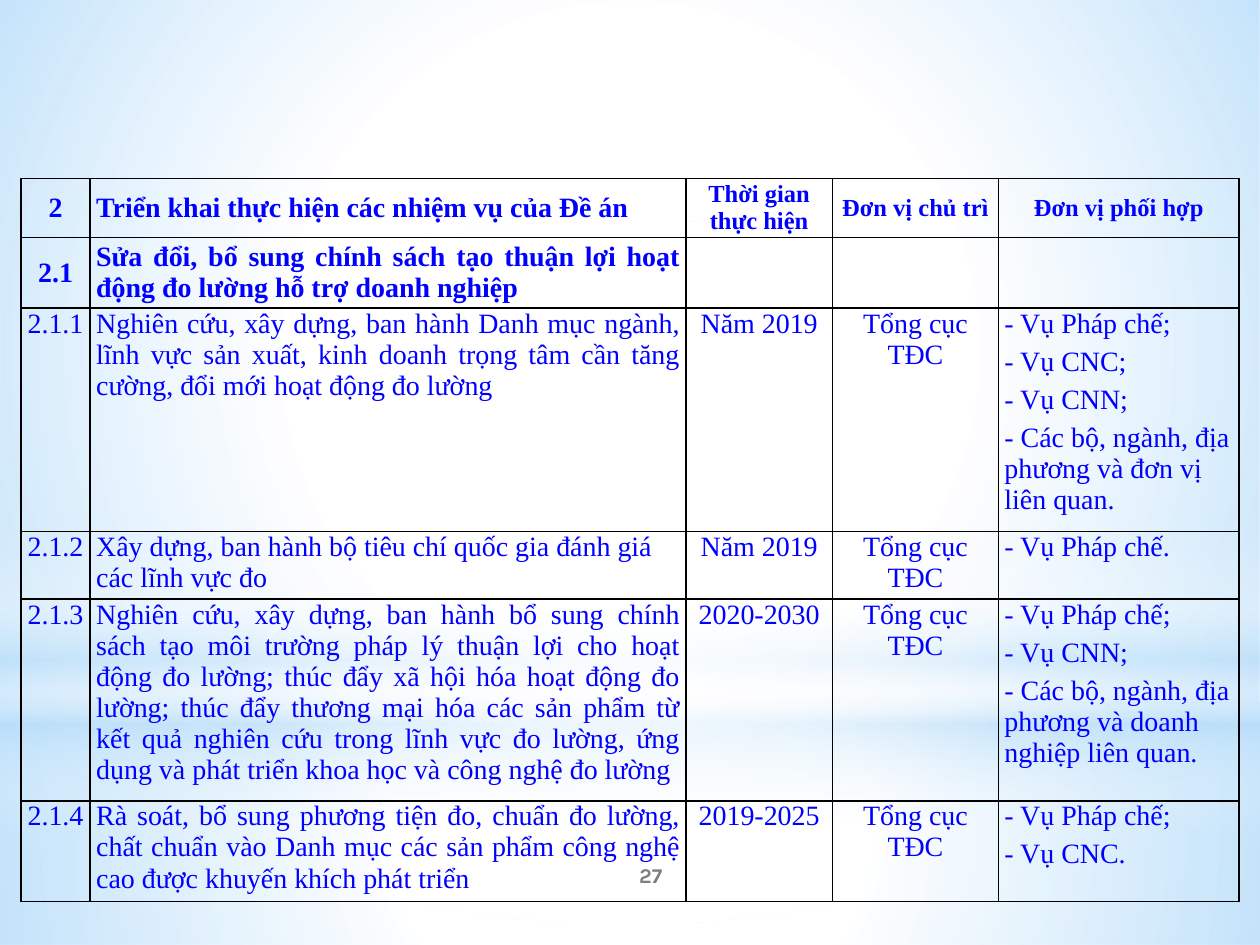
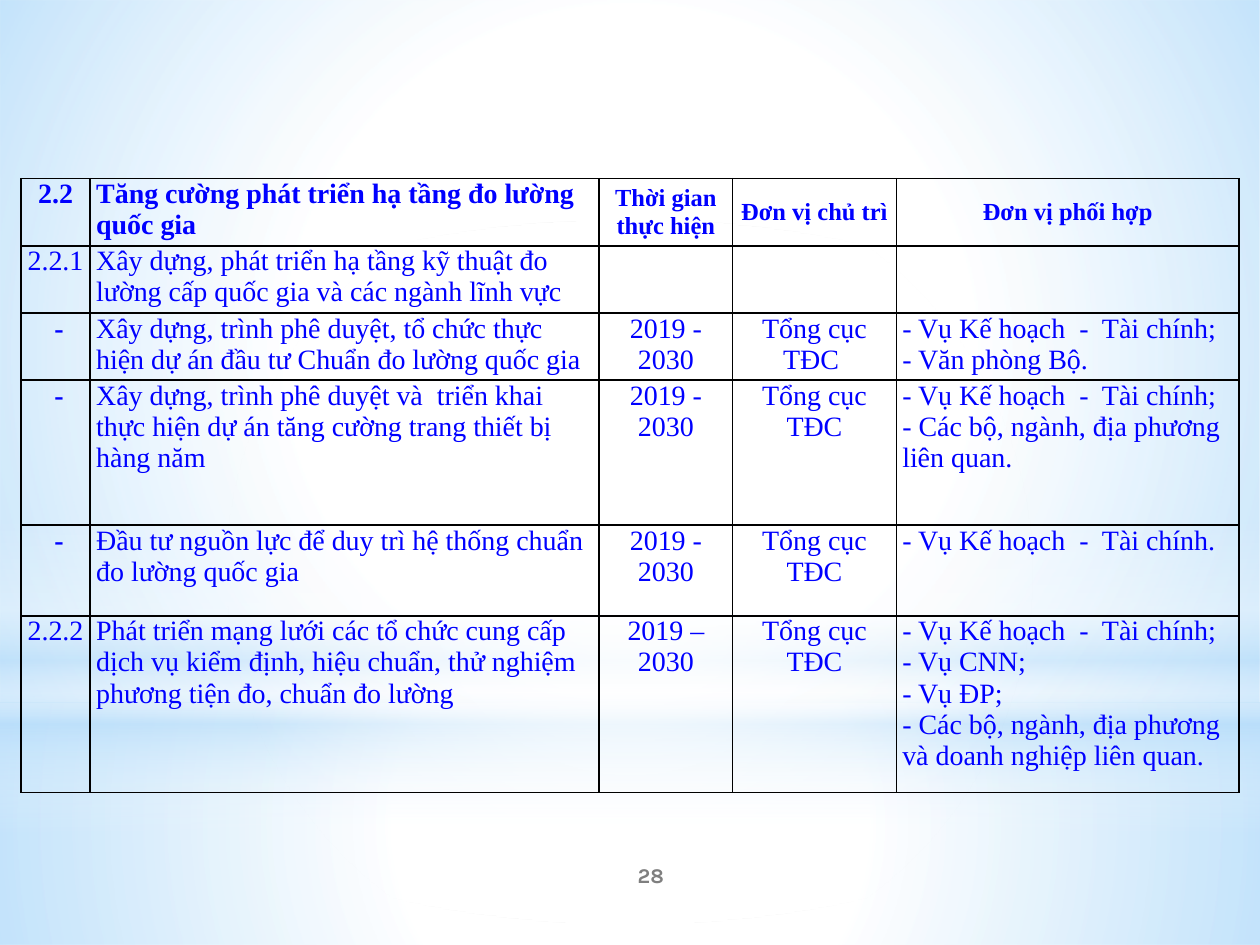
from dataclasses import dataclass

from lxml.etree import SubElement
from pptx import Presentation
from pptx.dml.color import RGBColor
from pptx.enum.shapes import MSO_SHAPE
from pptx.enum.text import MSO_ANCHOR, PP_ALIGN
from pptx.oxml import parse_xml
from pptx.oxml.ns import nsdecls, qn
from pptx.slide import Slide
from pptx.table import _Cell
from pptx.util import Cm, Pt

WHITE = RGBColor(0xFF, 0xFF, 0xFF)
SKY = RGBColor(0xB4, 0xDC, 0xFA)
BLUE = RGBColor(0x00, 0x00, 0xFF)
GRAY = RGBColor(0x7F, 0x7F, 0x7F)
BLACK = RGBColor(0x00, 0x00, 0x00)
BODY_FONT = "Times New Roman"
NUMBER_FONT = "Karla"
PERIOD_HEAD = ("Thời gian thực hiện", "Đơn vị chủ trì", "Đơn vị phối hợp")
AGENCY = "Tổng cục TĐC"
LEGAL = "- Vụ Pháp chế"
PLANNING = "- Vụ Kế hoạch  -  Tài chính"
PARTNERS = "- Các bộ, ngành, địa phương và doanh nghiệp liên quan."

RADIAL = ('<a:path path="circle"><a:fillToRect l="50000" t="50000" '
          'r="50000" b="50000"/></a:path>')
VERTICAL = '<a:lin ang="5400000" scaled="0"/>'


@dataclass(frozen=True)
class Stop:
    position: int
    color: RGBColor
    opacity: int


@dataclass(frozen=True)
class Glow:
    kind: MSO_SHAPE
    top: float
    height: float
    direction: str
    stops: tuple[Stop, ...]


@dataclass(frozen=True)
class Row:
    height: float
    cells: tuple[str, ...]
    bold: bool = False
    middle: bool = False
    justify: bool = False


@dataclass(frozen=True)
class Plan:
    number: int
    widths: tuple[float, ...]
    gap: int
    rows: tuple[Row, ...]


GLOWS = (
    Glow(MSO_SHAPE.RECTANGLE, 14.17, 4.88, RADIAL,
         (Stop(0, WHITE, 91), Stop(37, WHITE, 76), Stop(100, SKY, 79))),
    Glow(MSO_SHAPE.RECTANGLE, 0, 14.17, RADIAL,
         (Stop(0, WHITE, 89), Stop(48, WHITE, 62), Stop(100, SKY, 79))),
    Glow(MSO_SHAPE.RECTANGLE, 10.46, 6.35, VERTICAL,
         (Stop(0, WHITE, 0), Stop(29, WHITE, 30), Stop(45, SKY, 40),
          Stop(55, WHITE, 26), Stop(65, SKY, 60), Stop(100, WHITE, 0))),
    Glow(MSO_SHAPE.OVAL, 4.45, 14.17, RADIAL,
         (Stop(0, WHITE, 100), Stop(56, WHITE, 0))),
)

PLANS = (
    Plan(27, (1.4, 12.01, 2.95, 3.35, 4.85), 4, (
        Row(1.19, ("2", "Triển khai thực hiện các nhiệm vụ của Đề án", *PERIOD_HEAD),
            bold=True, middle=True, justify=True),
        Row(1.42, ("2.1", "Sửa đổi, bổ sung chính sách tạo thuận lợi hoạt động đo lường "
                   "hỗ trợ doanh nghiệp", "", "", ""),
            bold=True, middle=True, justify=True),
        Row(4.5, ("2.1.1", "Nghiên cứu, xây dựng, ban hành Danh mục ngành, lĩnh vực sản xuất, "
                  "kinh doanh trọng tâm cần tăng cường, đổi mới hoạt động đo lường",
                  "Năm 2019", AGENCY,
                  f"{LEGAL};\n- Vụ CNC;\n- Vụ CNN;\n"
                  "- Các bộ, ngành, địa phương và đơn vị liên quan."), justify=True),
        Row(1.37, ("2.1.2", "Xây dựng, ban hành bộ tiêu chí quốc gia đánh giá các lĩnh vực đo",
                   "Năm 2019", AGENCY, f"{LEGAL}.")),
        Row(4.06, ("2.1.3", "Nghiên cứu, xây dựng, ban hành bổ sung chính sách tạo môi trường "
                   "pháp lý thuận lợi cho hoạt động đo lường; thúc đẩy xã hội hóa hoạt động "
                   "đo lường; thúc đẩy thương mại hóa các sản phẩm từ kết quả nghiên cứu trong "
                   "lĩnh vực đo lường, ứng dụng và phát triển khoa học và công nghệ đo lường",
                   "2020-2030", AGENCY, f"{LEGAL};\n- Vụ CNN;\n{PARTNERS}"), justify=True),
        Row(2.03, ("2.1.4", "Rà soát, bổ sung phương tiện đo, chuẩn đo lường, chất chuẩn vào "
                   "Danh mục các sản phẩm công nghệ cao được khuyến khích phát triển",
                   "2019-2025", AGENCY, f"{LEGAL};\n- Vụ CNC."), justify=True),
    )),
    Plan(28, (1.4, 10.26, 2.69, 3.3, 6.91), 0, (
        Row(1.35, ("2.2", "Tăng cường phát triển hạ tầng đo lường quốc gia", *PERIOD_HEAD),
            bold=True),
        Row(1.35, ("2.2.1", "Xây dựng, phát triển hạ tầng kỹ thuật đo lường cấp quốc gia "
                   "và các ngành lĩnh vực", "", "", "")),
        Row(1.35, (" -", "Xây dựng, trình phê duyệt, tổ chức thực hiện dự án đầu tư "
                   "Chuẩn đo lường quốc gia", "2019 - 2030", "Tổng cục TĐC ",
                   f"{PLANNING};\n- Văn phòng Bộ.")),
        Row(2.92, (" -", "Xây dựng, trình phê duyệt và  triển khai thực hiện dự án "
                   "tăng cường trang thiết bị hàng năm", "2019 - 2030", AGENCY,
                   f"{PLANNING};\n- Các bộ, ngành, địa phương liên quan.")),
        Row(1.83, (" -", "Đầu tư nguồn lực để duy trì hệ thống chuẩn đo lường quốc gia",
                   "2019 - 2030", AGENCY, f"{PLANNING}.")),
        Row(3.56, ("2.2.2", "Phát triển mạng lưới các tổ chức cung cấp dịch vụ kiểm định, "
                   "hiệu chuẩn, thử nghiệm phương tiện đo, chuẩn đo lường",
                   "2019 – 2030", AGENCY,
                   f"{PLANNING};\n- Vụ CNN;\n- Vụ ĐP;\n{PARTNERS}")),
    )),
)


def draw_glow(s: Slide, glow: Glow) -> None:
    sp = s.shapes.add_shape(glow.kind, 0, Cm(glow.top), Cm(25.4), Cm(glow.height))
    sp.shadow.inherit = False
    sp.line.fill.background()
    sp.fill.background()
    stops = "".join(
        f'<a:gs pos="{stop.position * 1000}"><a:srgbClr val="{stop.color}">'
        f'<a:alpha val="{stop.opacity * 1000}"/></a:srgbClr></a:gs>'
        for stop in glow.stops)
    gradient = parse_xml(f'<a:gradFill {nsdecls("a")} rotWithShape="1">'
                         f'<a:gsLst>{stops}</a:gsLst>{glow.direction}</a:gradFill>')
    properties = sp._element.spPr
    properties.replace(properties.find(qn("a:noFill")), gradient)


def draw_number(s: Slide, number: int) -> None:
    tf = s.shapes.add_textbox(Cm(10.58), Cm(17.14), Cm(5.08), Cm(1.02)).text_frame
    tf.word_wrap = True
    tf.vertical_anchor = MSO_ANCHOR.MIDDLE
    p = tf.paragraphs[0]
    p.text = str(number)
    p.alignment = PP_ALIGN.CENTER
    p.font.name, p.font.size, p.font.bold = NUMBER_FONT, Pt(12), True
    p.font.color.rgb = GRAY


def format_cell(cell: _Cell) -> None:
    properties = cell._tc.get_or_add_tcPr()
    for side in ("lnL", "lnR", "lnT", "lnB"):
        line = SubElement(properties, qn(f"a:{side}"), w=str(Pt(1)))
        fill = SubElement(line, qn("a:solidFill"))
        SubElement(fill, qn("a:srgbClr"), val=str(BLACK))
    cell.fill.background()
    cell.margin_left = cell.margin_right = Cm(0.12)
    cell.margin_top = cell.margin_bottom = 0


def fill_cell(cell: _Cell, text: str, row: Row, column: int, gap: int) -> None:
    is_head = text in PERIOD_HEAD
    if row.middle or is_head:
        cell.vertical_anchor = MSO_ANCHOR.MIDDLE
    if column == 1:
        alignment = PP_ALIGN.JUSTIFY if row.justify else PP_ALIGN.LEFT
    else:
        alignment = PP_ALIGN.LEFT if column == 4 and not is_head else PP_ALIGN.CENTER
    tf = cell.text_frame
    tf.text = text
    for index, p in enumerate(tf.paragraphs):
        p.alignment = alignment
        if index and gap:
            p.space_before = Pt(gap)
        p.font.name = BODY_FONT
        p.font.size = Pt(14 if is_head else 16)
        p.font.bold = row.bold or text.strip() == "-"
        p.font.color.rgb = BLUE


def draw_table(s: Slide, plan: Plan) -> None:
    height = sum(row.height for row in plan.rows)
    table = s.shapes.add_table(len(plan.rows), len(plan.widths), Cm(0.42), Cm(3.6),
                               Cm(sum(plan.widths)), Cm(height)).table
    table.first_row = table.horz_banding = False
    for column, width in zip(table.columns, plan.widths):
        column.width = Cm(width)
    for i, row in enumerate(plan.rows):
        table.rows[i].height = Cm(row.height)
        for j, text in enumerate(row.cells):
            cell = table.cell(i, j)
            format_cell(cell)
            fill_cell(cell, text, row, j, plan.gap)


def main() -> None:
    prs = Presentation()
    prs.slide_width, prs.slide_height = Cm(25.4), Cm(19.05)
    for plan in PLANS:
        s = prs.slides.add_slide(prs.slide_layouts[6])
        for glow in GLOWS:
            draw_glow(s, glow)
        draw_number(s, plan.number)
        draw_table(s, plan)
    prs.save("out.pptx")


if __name__ == "__main__":
    main()
